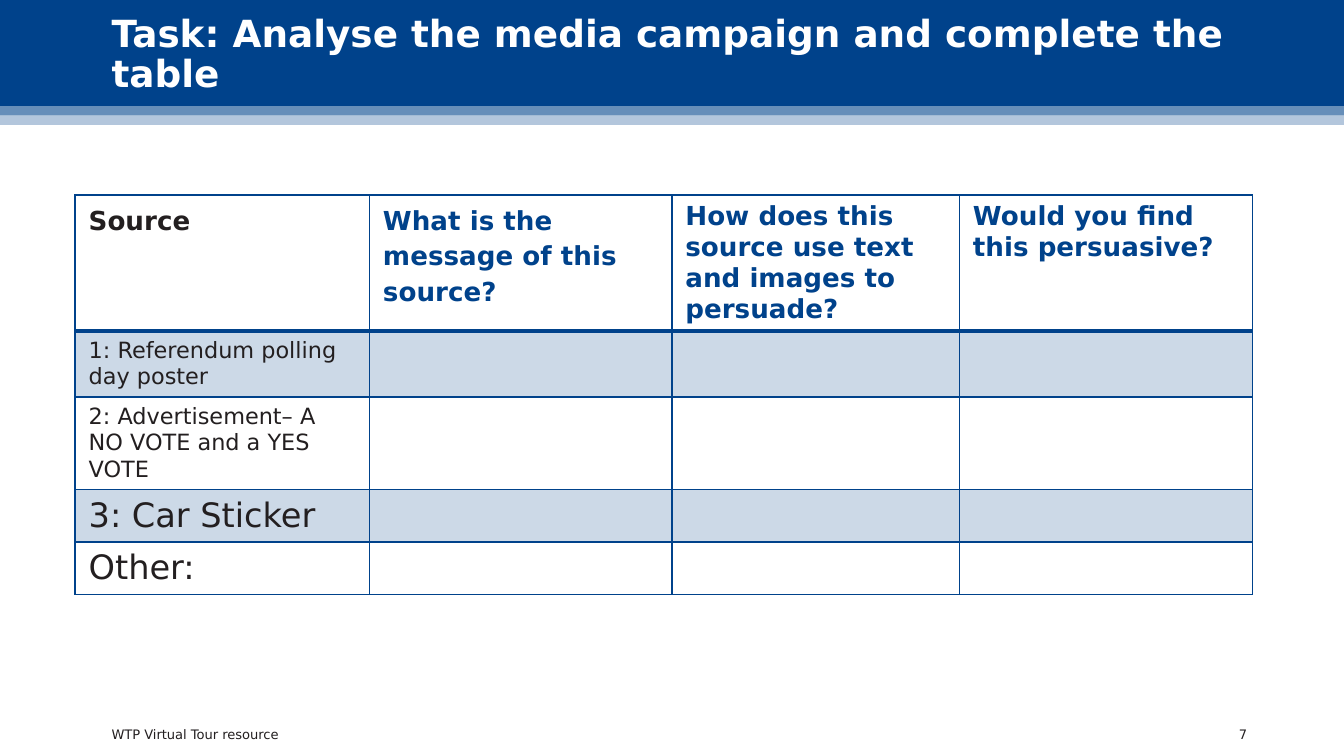
from pptx import Presentation
from pptx.dml.color import RGBColor
from pptx.enum.shapes import MSO_SHAPE
from pptx.enum.text import MSO_ANCHOR, MSO_AUTO_SIZE, PP_ALIGN
from pptx.oxml.ns import qn
from pptx.util import Inches, Pt
from lxml import etree

RECT = MSO_SHAPE.RECTANGLE
MID = MSO_ANCHOR.MIDDLE
LEFT, RIGHT = PP_ALIGN.LEFT, PP_ALIGN.RIGHT
FIXED = MSO_AUTO_SIZE.NONE

FONT = "DejaVu Sans"
COLORS = {
    "navy": "00428B",
    "steel": "668EB9",
    "pale": "B3C6DC",
    "white": "FFFFFF",
    "ink": "231F20",
}
TINT = 20  # opacity of shaded rows, percent

COLS = [2.19, 2.25, 2.14, 2.18]
ROWS = [1, 0.34, 0.38, 0.35, 0.35]
HEADS = [
    ("Source", {"color": "ink", "line": 1.15}),
    ("What is the message of this source?",
     {"line": 1.15, "before": 12, "after": 12}),
    ("How does this source use text and images to persuade?", {}),
    ("Would you find this persuasive?", {}),
]
SOURCES = [
    ("1: Referendum polling day poster", 12),
    ("2: Advertisement– A NO VOTE and a YES VOTE", 12),
    ("3: Car Sticker", 18),
    ("Other:", 18),
]


def rgb(name):
    return RGBColor.from_string(COLORS[name])


def write(frame, text, size, color="ink", bold=False, align=LEFT,
          line=None, before=None, after=None):
    para = frame.paragraphs[0]
    para.alignment = align
    if line:
        para.line_spacing = line
    if before is not None:
        para.space_before = Pt(before)
    if after is not None:
        para.space_after = Pt(after)
    run = para.add_run()
    run.text = text
    font = run.font
    font.name, font.size, font.bold = FONT, Pt(size), bold
    font.color.rgb = rgb(color)


def fit(frame):
    """Give a text frame the slide's tight margins and middle anchor."""
    frame.word_wrap = True
    frame.auto_size = FIXED
    frame.vertical_anchor = MID
    frame.margin_left = frame.margin_right = Inches(0.04)
    frame.margin_top = frame.margin_bottom = Inches(0.04)


def band(slide, x, y, w, h, color):
    bar = slide.shapes.add_shape(RECT, Inches(x), Inches(y),
                                 Inches(w), Inches(h))
    bar.shadow.inherit = False
    bar.fill.solid()
    bar.fill.fore_color.rgb = rgb(color)
    bar.line.fill.background()


def header(slide, x, y, w, h, text):
    strip = 0.07
    band(slide, x, y, w, h, "navy")
    band(slide, x, y + h, w, strip, "steel")
    band(slide, x, y + h + strip, w, strip, "pale")
    title = slide.shapes.title
    title.left, title.top = Inches(x + 0.79), Inches(y + 0.06)
    title.width, title.height = Inches(8.43), Inches(0.71)
    fit(title.text_frame)
    write(title.text_frame, text, 20, "white", bold=True, line=0.9)
    slide.shapes._spTree.append(title._element)  # in front of the bands


def border(cell, **widths):
    """Draw the cell's edges; widths are points by edge name."""
    props = cell._tc.get_or_add_tcPr()
    for edge in ("lnL", "lnR", "lnT", "lnB"):
        width = Pt(widths.get(edge, 1))
        line = etree.SubElement(props, qn("a:" + edge), w=str(width))
        fill = etree.SubElement(line, qn("a:solidFill"))
        etree.SubElement(fill, qn("a:srgbClr"), val=COLORS["navy"])


def shade(cell):
    cell.fill.solid()
    cell.fill.fore_color.rgb = rgb("navy")
    tone = cell._tc.tcPr.find(qn("a:solidFill")).find(qn("a:srgbClr"))
    etree.SubElement(tone, qn("a:alpha"), val=str(TINT * 1000))


def blank(cell):
    """Set the text size of an empty cell, so that its row stays low."""
    para = cell.text_frame.paragraphs[0]._p
    etree.SubElement(para, qn("a:endParaRPr"), sz="1200")


def grid(slide, x, y, w, h):
    table = slide.shapes.add_table(len(ROWS), len(COLS), Inches(x), Inches(y),
                                   Inches(w), Inches(h)).table
    table.first_row = table.horz_banding = False
    for col, width in zip(table.columns, COLS):
        col.width = Inches(width)
    for row, height in zip(table.rows, ROWS):
        row.height = Inches(height)

    for r in range(len(ROWS)):
        for c in range(len(COLS)):
            cell = table.cell(r, c)
            border(cell, lnT=2 if r == 1 else 1, lnB=2 if r == 0 else 1)
            if r % 2:
                shade(cell)
            else:
                cell.fill.background()
            if r and c:
                blank(cell)

    for c, (text, style) in enumerate(HEADS):
        style = {"color": "navy", "bold": True, **style}
        write(table.cell(0, c).text_frame, text, 14, **style)
    for r, (text, size) in enumerate(SOURCES, 1):
        write(table.cell(r, 0).text_frame, text, size)


def label(slide, x, y, w, h, text, **style):
    box = slide.shapes.add_textbox(Inches(x), Inches(y), Inches(w), Inches(h))
    fit(box.text_frame)
    write(box.text_frame, text, 7, **style)


def footer(slide, x, y, w, h):
    num = 0.65
    label(slide, x, y, 3.38, h, "WTP Virtual Tour resource")
    label(slide, x + w - num, y, num, h, "7", align=RIGHT)


def main():
    deck = Presentation()
    deck.slide_width = Inches(10)
    deck.slide_height = deck.slide_width * 9 // 16
    slide = deck.slides.add_slide(deck.slide_layouts[5])
    header(slide, 0, 0, 10, 0.79,
           "Task: Analyse the media campaign and complete the table")
    grid(slide, 0.56, 1.45, sum(COLS), sum(ROWS))
    footer(slide, 0.79, 5.37, 8.53, 0.18)
    deck.save("out.pptx")


if __name__ == "__main__":
    main()
